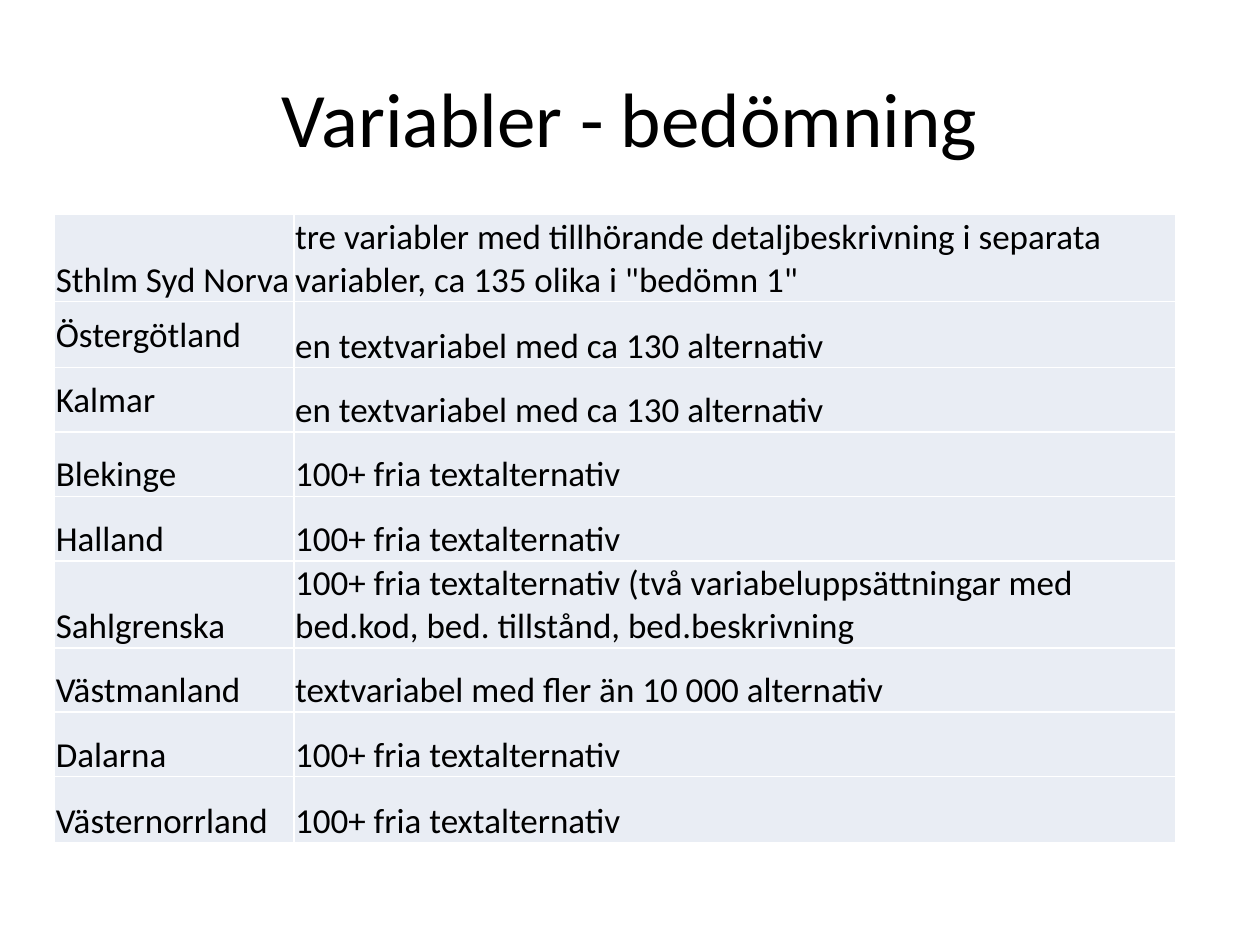
"""Build the slide "Variabler - bedömning" with its table of regions."""
from dataclasses import dataclass

from lxml import etree
from pptx import Presentation
from pptx.dml.color import RGBColor
from pptx.enum import text
from pptx.oxml import ns
from pptx.util import Pt


@dataclass(frozen=True)
class Theme:
    font: str = "Calibri"
    ink: RGBColor = RGBColor(0x00, 0x00, 0x00)
    cell: RGBColor = RGBColor(0xE9, 0xED, 0xF4)
    border: str = "FFFFFF"
    title_size: int = 44
    body_size: int = 20


theme = Theme()


def style_paragraph(paragraph, size):
    paragraph.font.name = theme.font
    paragraph.font.size = Pt(size)
    paragraph.font.color.rgb = theme.ink


def add_borders(cell):
    properties = cell._tc.get_or_add_tcPr()
    for side in ("lnL", "lnR", "lnT", "lnB"):
        line = etree.SubElement(properties, ns.qn(f"a:{side}"), w=str(Pt(1)))
        fill = etree.SubElement(line, ns.qn("a:solidFill"))
        etree.SubElement(fill, ns.qn("a:srgbClr"), val=theme.border)


FREE_TEXT = "100+ fria textalternativ"
ONE_VARIABLE = "en textvariabel med ca 130 alternativ"
regions = [
    ("Sthlm Syd Norva", "tre variabler med tillhörande detaljbeskrivning i separata "
                        'variabler, ca 135 olika i "bedömn 1"'),
    ("Östergötland", ONE_VARIABLE),
    ("Kalmar", ONE_VARIABLE),
    ("Blekinge", FREE_TEXT),
    ("Halland", FREE_TEXT),
    ("Sahlgrenska", FREE_TEXT + " (två variabeluppsättningar med "
                    "bed.kod, bed. tillstånd, bed.beskrivning"),
    ("Västmanland", "textvariabel med fler än 10 000 alternativ"),
    ("Dalarna", FREE_TEXT),
    ("Västernorrland", FREE_TEXT),
]
middle_regions = {"Östergötland", "Kalmar"}
tall_rows = {0, 1, len(regions) - 1}

presentation = Presentation()
presentation.slide_width = Pt(720)
presentation.slide_height = Pt(540)
slide = presentation.slides.add_slide(presentation.slide_layouts[5])

title = slide.shapes.title
title.left, title.top, title.width, title.height = Pt(36), Pt(21.6), Pt(648), Pt(90)
title.text_frame.text = "Variabler - bedömning"
title.text_frame.vertical_anchor = text.MSO_ANCHOR.MIDDLE
title_paragraph = title.text_frame.paragraphs[0]
title_paragraph.alignment = text.PP_ALIGN.CENTER
style_paragraph(title_paragraph, theme.title_size)

table = slide.shapes.add_table(
    len(regions), 2, Pt(31.2), Pt(122.6), Pt(640.8), Pt(335)).table
table.first_row = False
table.horz_banding = False
table.columns[0].width = Pt(136.8)
table.columns[1].width = Pt(504)

for row_index, region in enumerate(regions):
    table.rows[row_index].height = Pt(37.8 if row_index in tall_rows else 36.8)
    for column_index, wording in enumerate(region):
        cell = table.cell(row_index, column_index)
        cell.text = wording
        cell.margin_left = cell.margin_right = cell.margin_top = Pt(0.7)
        cell.margin_bottom = Pt(0)
        cell.vertical_anchor = (text.MSO_ANCHOR.MIDDLE if wording in middle_regions
                                else text.MSO_ANCHOR.BOTTOM)
        add_borders(cell)
        cell.fill.solid()
        cell.fill.fore_color.rgb = theme.cell
        style_paragraph(cell.text_frame.paragraphs[0], theme.body_size)

presentation.save("out.pptx")
